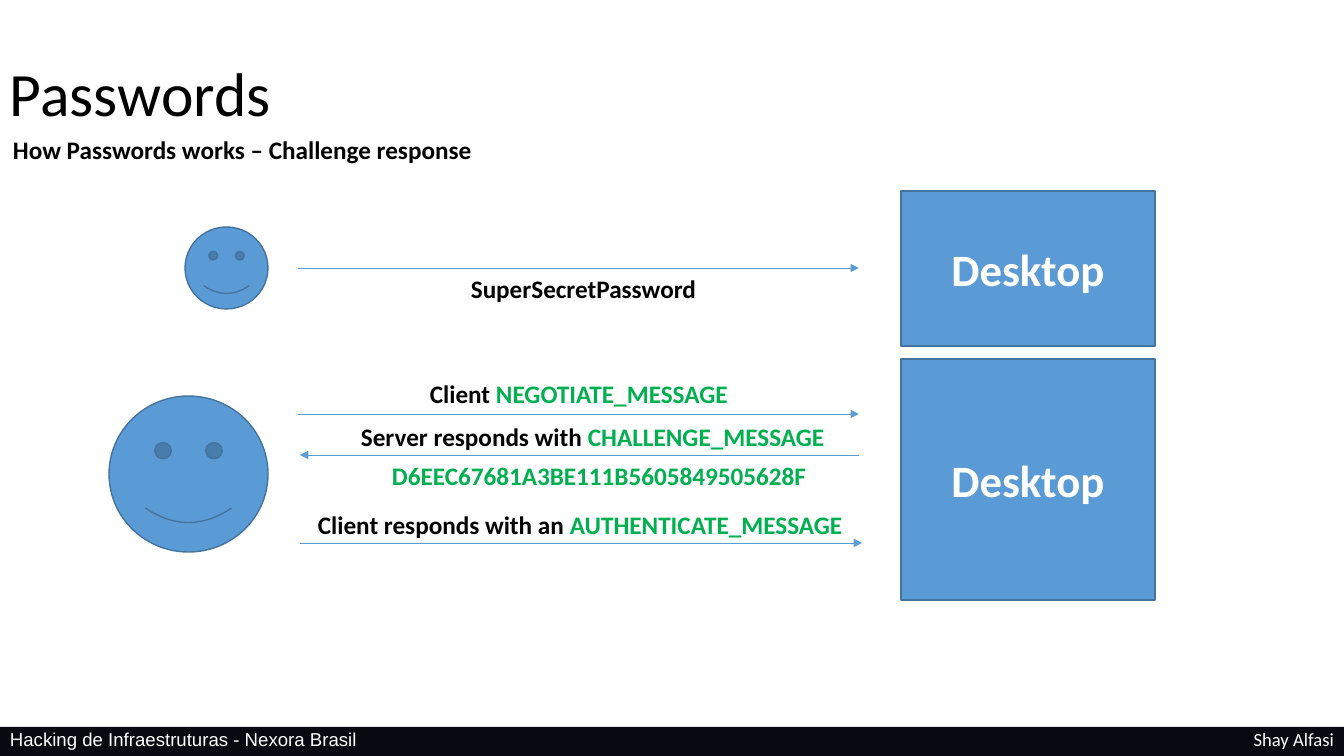
from lxml import etree
from pptx import Presentation
from pptx.dml.color import RGBColor
from pptx.enum.shapes import MSO_CONNECTOR, MSO_SHAPE
from pptx.enum.text import MSO_ANCHOR, PP_ALIGN
from pptx.oxml.ns import qn
from pptx.util import Emu, Pt

RECTANGLE = MSO_SHAPE.RECTANGLE
SMILEY = MSO_SHAPE.SMILEY_FACE
STRAIGHT = MSO_CONNECTOR.STRAIGHT
LEFT, CENTER, RIGHT = PP_ALIGN.LEFT, PP_ALIGN.CENTER, PP_ALIGN.RIGHT
TOP, MIDDLE = MSO_ANCHOR.TOP, MSO_ANCHOR.MIDDLE

BLACK = RGBColor(0x00, 0x00, 0x00)
WHITE = RGBColor(0xFF, 0xFF, 0xFF)
GREEN = RGBColor(0x00, 0xB0, 0x50)
BLUE = RGBColor(0x5B, 0x9B, 0xD5)
DARK_BLUE = RGBColor(0x43, 0x73, 0x9E)
NAVY = RGBColor(0x09, 0x09, 0x11)

EMU_PER_PX = 914400 / 100.8


def px(*lengths):
    return [Emu(round(length * EMU_PER_PX)) for length in lengths]


def write(box, *spans, size=18, bold=True, font="Calibri", align=LEFT,
          anchor=TOP, wrap=True, spacing=1.0):
    frame = box.text_frame
    frame.word_wrap = wrap
    frame.vertical_anchor = anchor
    para = frame.paragraphs[0]
    para.alignment = align
    para.line_spacing = spacing
    for text, color in spans:
        span = para.add_run()
        span.text = text
        span.font.name = font
        span.font.size = Pt(size)
        span.font.bold = bold
        span.font.color.rgb = color


deck = Presentation()
deck.slide_width, deck.slide_height = px(1344, 756)
page = deck.slides.add_slide(deck.slide_layouts[6])
shapes = page.shapes

footer = shapes.add_shape(RECTANGLE, *px(0, 727, 1344, 29))
footer.shadow.inherit = False
footer.fill.solid()
footer.fill.fore_color.rgb = NAVY
footer.line.fill.background()

course = shapes.add_textbox(*px(0, 723, 842, 33))
write(course, ("Hacking de Infraestruturas - Nexora Brasil", WHITE),
      size=13.3, bold=False, font="Arial")
author = shapes.add_textbox(*px(698, 723, 646, 33))
write(author, ("Shay Alfasi", WHITE), size=13.3, bold=False, align=RIGHT)

title = shapes.add_textbox(*px(0, 47, 1127, 99))
write(title, ("Passwords", BLACK), size=44, bold=False, anchor=MIDDLE, spacing=0.9)
subtitle = shapes.add_textbox(*px(3, 129, 482, 40))
write(subtitle, ("How Passwords works – Challenge response", BLACK))

for kind, area, label in [
    (SMILEY, (185, 227, 83, 82), None),
    (RECTANGLE, (901, 191, 254, 155), "Desktop"),
    (SMILEY, (109, 396, 159, 156), None),
    (RECTANGLE, (901, 359, 254, 241), "Desktop"),
]:
    actor = shapes.add_shape(kind, *px(*area))
    actor.shadow.inherit = False
    actor.fill.solid()
    actor.fill.fore_color.rgb = BLUE
    actor.line.color.rgb = DARK_BLUE
    actor.line.width = Pt(1)
    if label:
        write(actor, (label, WHITE), size=32, align=CENTER, anchor=MIDDLE)

for start, end, height in [
    (298, 859, 268),
    (298, 859, 414),
    (859, 300, 455),
    (300, 862, 543),
]:
    arrow = shapes.add_connector(STRAIGHT, *px(start, height, end, height))
    arrow.line.color.rgb = BLUE
    arrow.line.width = Pt(0.5)
    outline = arrow.line._get_or_add_ln()
    etree.SubElement(outline, qn("a:tailEnd"), type="triangle")
    etree.SubElement(arrow._element.spPr, qn("a:effectLst"))

for left, top, width, spans in [
    (461, 268, 247, [("SuperSecretPassword", BLACK)]),
    (420, 373, 319, [("Client ", BLACK), ("NEGOTIATE_MESSAGE", GREEN)]),
    (351, 416, 484, [("Server responds with ", BLACK), ("CHALLENGE_MESSAGE", GREEN)]),
    (382, 455, 438, [("D6EEC67681A3BE111B5605849505628F", GREEN)]),
    (308, 504, 549, [("Client responds with an ", BLACK), ("AUTHENTICATE_MESSAGE", GREEN)]),
]:
    message = shapes.add_textbox(*px(left, top, width, 40))
    write(message, *spans, wrap=False)

deck.save("out.pptx")
